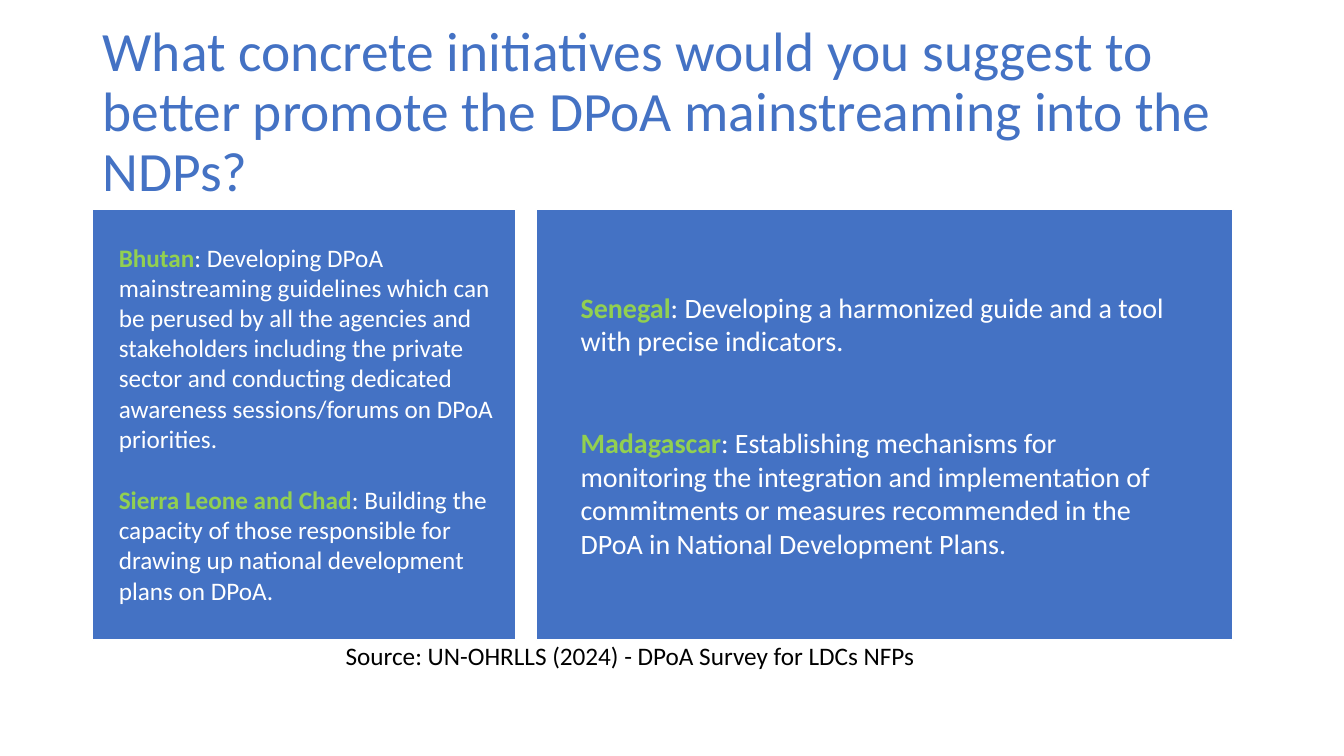
from pptx import Presentation
from pptx.dml.color import RGBColor
from pptx.enum.shapes import MSO_SHAPE as Shape
from pptx.enum.text import MSO_ANCHOR as Anchor
from pptx.util import Inches, Pt

BLUE = RGBColor(0x44, 0x72, 0xC4)
GREEN = RGBColor(0x92, 0xD0, 0x50)
WHITE = RGBColor(0xFF, 0xFF, 0xFF)
BLACK = RGBColor(0x00, 0x00, 0x00)
FONT = "Calibri"

TITLE = ("What concrete initiatives would you suggest to better promote "
         "the DPoA mainstreaming into the NDPs?")
SOURCE = "Source: UN-OHRLLS (2024) - DPoA Survey for LDCs NFPs"
LEFT_ANSWERS = [
    ("Bhutan", ": Developing DPoA mainstreaming guidelines which can be perused "
     "by all the agencies and stakeholders including the private sector and "
     "conducting dedicated awareness sessions/forums on DPoA priorities."),
    ("Sierra Leone and Chad", ": Building the capacity of those responsible for "
     "drawing up national development plans on DPoA."),
]
RIGHT_ANSWERS = [
    ("Senegal", ": Developing a harmonized guide and a tool with precise "
     "indicators."),
    ("Madagascar", ": Establishing mechanisms for monitoring the integration and "
     "implementation of commitments or measures recommended in the DPoA in "
     "National Development Plans."),
]


def add_frame(slide, box):
    frame = slide.shapes.add_textbox(*map(Inches, box)).text_frame
    frame.word_wrap = True
    return frame


def style(run, size, color, bold=False):
    run.font.name = FONT
    run.font.size = Pt(size)
    run.font.bold = bold
    run.font.color.rgb = color


def add_line(slide, box, text, size, color):
    frame = add_frame(slide, box)
    frame.text = text
    style(frame.paragraphs[0].runs[0], size, color)
    return frame


def add_title(slide, box):
    frame = add_line(slide, box, TITLE, 39.6, BLUE)
    frame.vertical_anchor = Anchor.MIDDLE
    frame.paragraphs[0].line_spacing = 0.9


def add_panel(slide, box, inset, answers, size, gap):
    left, top, width, height = box
    inset_left, inset_top, inset_right = inset
    panel = slide.shapes.add_shape(Shape.RECTANGLE, *map(Inches, box))
    panel.shadow.inherit = False
    panel.fill.solid()
    panel.fill.fore_color.rgb = BLUE
    panel.line.color.rgb = WHITE
    panel.line.width = Pt(1)

    frame = add_frame(slide, (left + inset_left, top + inset_top,
                              width - inset_left - inset_right,
                              height - 2 * inset_top))
    for index, (country, proposal) in enumerate(answers):
        answer = frame.paragraphs[0] if index == 0 else frame.add_paragraph()
        answer.space_before = Pt(gap if index else 0)
        for text, color, bold in ((country, GREEN, True), (proposal, WHITE, False)):
            run = answer.add_run()
            run.text = text
            style(run, size, color, bold)


def main():
    deck = Presentation()
    deck.slide_width, deck.slide_height = Inches(13.33), Inches(7.5)
    slide = deck.slides.add_slide(deck.slide_layouts[6])
    add_title(slide, (0.92, 0.4, 11.5, 1.45))
    add_panel(slide, (0.92, 2.08, 4.2, 4.27), (0.16, 0.27, 0.13),
              LEFT_ANSWERS, 18, 22)
    add_panel(slide, (5.32, 2.08, 6.91, 4.27), (0.34, 0.75, 0.55),
              RIGHT_ANSWERS, 20, 48.8)
    add_line(slide, (3.33, 6.3, 6.67, 0.4), SOURCE, 18, BLACK)
    deck.save("out.pptx")


if __name__ == "__main__":
    main()
